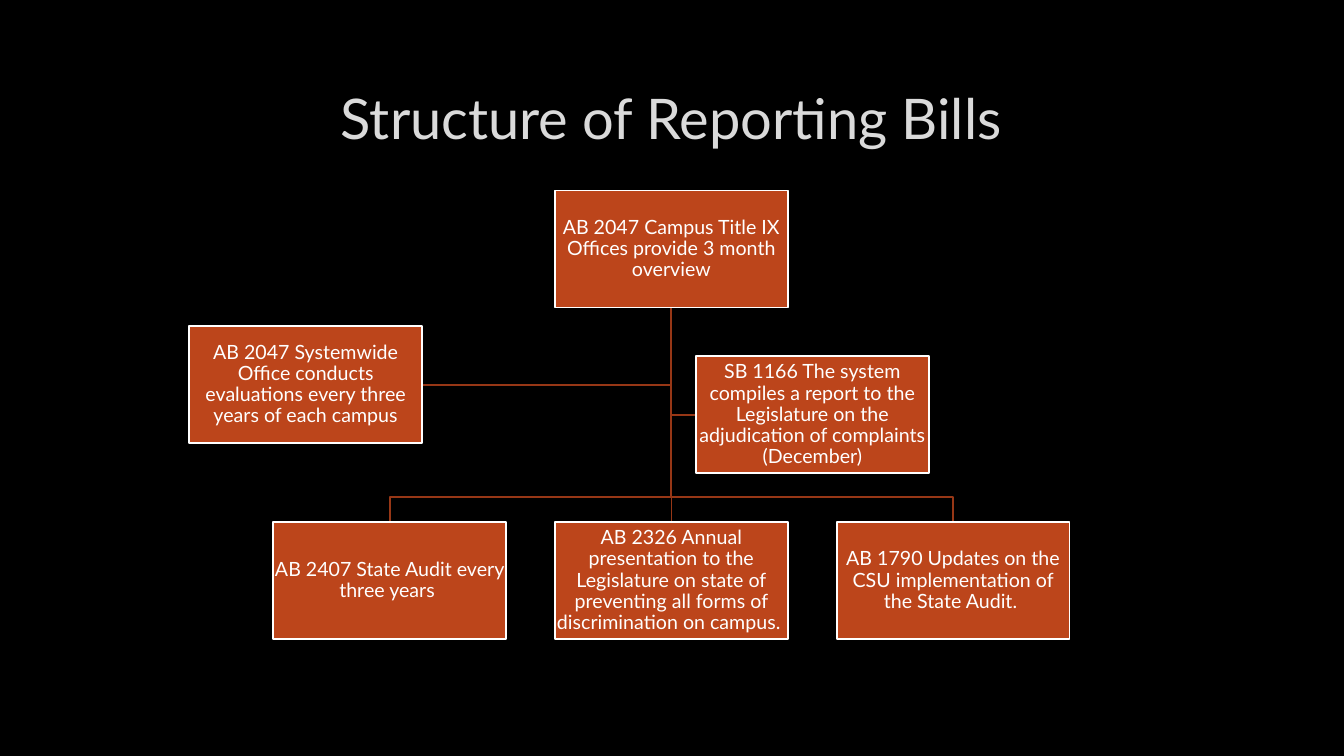
from dataclasses import dataclass

from lxml import etree
from pptx import Presentation, util as u
from pptx.dml.color import RGBColor
from pptx.enum import shapes, text
from pptx.oxml.ns import qn


@dataclass(frozen=True)
class Theme:
    font: str = "Lato"
    background: str = "000000"
    title: str = "DADADA"
    title_edge: str = "404040"
    box: str = "BC451B"
    branch: str = "973716"
    white: str = "FFFFFF"
    title_size: float = 40
    box_size: float = 14
    line_width: float = 1.25


BOX_WIDTH, BOX_HEIGHT = 5.87, 2.95
CENTER, PITCH = 16.92, 7.1
ROOT_TOP, BUS, BOTTOM_TOP = 4.8, 12.53, 13.16
ROOT_BOTTOM = ROOT_TOP + BOX_HEIGHT

ROOT_TEXT = "AB 2047 Campus Title IX Offices provide 3 month overview"
BOTTOM_TEXTS = [
    "AB 2407 State Audit every three years ",
    "AB 2326 Annual presentation to the Legislature on state of "
    "preventing all forms of discrimination on campus. ",
    "AB 1790 Updates on the CSU implementation of the State Audit. ",
]
SIDE_BOXES = [
    (4.77, 8.22, "AB 2047 Systemwide Office conducts evaluations every three "
                 "years of each campus"),
    (17.54, 8.98, "SB 1166 The system compiles a report to the Legislature on "
                  "the adjudication of complaints (December)"),
]


class ChartSlide:
    def __init__(self, deck, theme):
        self.theme = theme
        self.page = deck.slides.add_slide(deck.slide_layouts[5])
        self.paint(self.page.background.fill, theme.background)

    def paint(self, fill, color):
        fill.solid()
        fill.fore_color.rgb = RGBColor.from_string(color)

    def stroke(self, line, color):
        self.paint(line.fill, color)
        line.width = u.Pt(self.theme.line_width)

    def add_words(self, frame, words, size, color):
        frame.word_wrap = True
        frame.vertical_anchor = text.MSO_ANCHOR.MIDDLE
        para = frame.paragraphs[0]
        para.alignment = text.PP_ALIGN.CENTER
        para.line_spacing = 0.9
        span = para.add_run()
        span.text = words
        span.font.name = self.theme.font
        span.font.size = u.Pt(size)
        self.paint(span.font.fill, color)
        return span

    def title(self, words, left, top, width, height):
        holder = self.page.shapes.title
        holder.left, holder.top = u.Cm(left), u.Cm(top)
        holder.width, holder.height = u.Cm(width), u.Cm(height)
        span = self.add_words(holder.text_frame, words, self.theme.title_size, self.theme.title)
        edge = etree.Element(qn("a:ln"), w=str(u.Pt(0.75)))
        fill = etree.SubElement(edge, qn("a:solidFill"))
        color = etree.SubElement(fill, qn("a:srgbClr"), val=self.theme.title_edge)
        etree.SubElement(color, qn("a:alpha"), val="10000")
        span.font._element.insert(0, edge)

    def box(self, left, top, words):
        box = self.page.shapes.add_shape(
            shapes.MSO_SHAPE.RECTANGLE,
            u.Cm(left), u.Cm(top), u.Cm(BOX_WIDTH), u.Cm(BOX_HEIGHT))
        box.shadow.inherit = False
        self.paint(box.fill, self.theme.box)
        self.stroke(box.line, self.theme.white)
        frame = box.text_frame
        frame.margin_left = frame.margin_right = u.Cm(0.02)
        frame.margin_top = frame.margin_bottom = u.Cm(0.02)
        self.add_words(frame, words, self.theme.box_size, self.theme.white)

    def branch(self, *points):
        start, *rest = [(u.Cm(x), u.Cm(y)) for x, y in points]
        builder = self.page.shapes.build_freeform(*start)
        builder.add_line_segments(rest, close=False)
        branch = builder.convert_to_shape()
        branch.shadow.inherit = False
        branch.fill.background()
        self.stroke(branch.line, self.theme.branch)

    def trunk(self, x, top, bottom):
        trunk = self.page.shapes.add_connector(
            shapes.MSO_CONNECTOR.STRAIGHT, u.Cm(x), u.Cm(top), u.Cm(x), u.Cm(bottom))
        self.stroke(trunk.line, self.theme.branch)
        etree.SubElement(trunk._element.spPr, qn("a:effectLst"))


def main():
    deck = Presentation()
    deck.slide_width, deck.slide_height = u.Cm(33.87), u.Cm(19.05)
    slide = ChartSlide(deck, Theme())
    slide.title("Structure of Reporting Bills", 2.54, 1.7, 28.75, 2.7)

    root = (CENTER, ROOT_BOTTOM)
    for left, top, _ in SIDE_BOXES:
        near_edge = left if left > CENTER else left + BOX_WIDTH
        middle = top + BOX_HEIGHT / 2
        slide.branch(root, (CENTER, middle), (near_edge, middle))
    for x in (CENTER - PITCH, CENTER + PITCH):
        slide.branch(root, (CENTER, BUS), (x, BUS), (x, BOTTOM_TOP))
    slide.trunk(CENTER, ROOT_BOTTOM, BOTTOM_TOP)

    middle_left = CENTER - BOX_WIDTH / 2
    slide.box(middle_left, ROOT_TOP, ROOT_TEXT)
    for column, words in enumerate(BOTTOM_TEXTS, -1):
        slide.box(middle_left + column * PITCH, BOTTOM_TOP, words)
    for side_box in SIDE_BOXES:
        slide.box(*side_box)

    deck.save("out.pptx")


if __name__ == "__main__":
    main()
